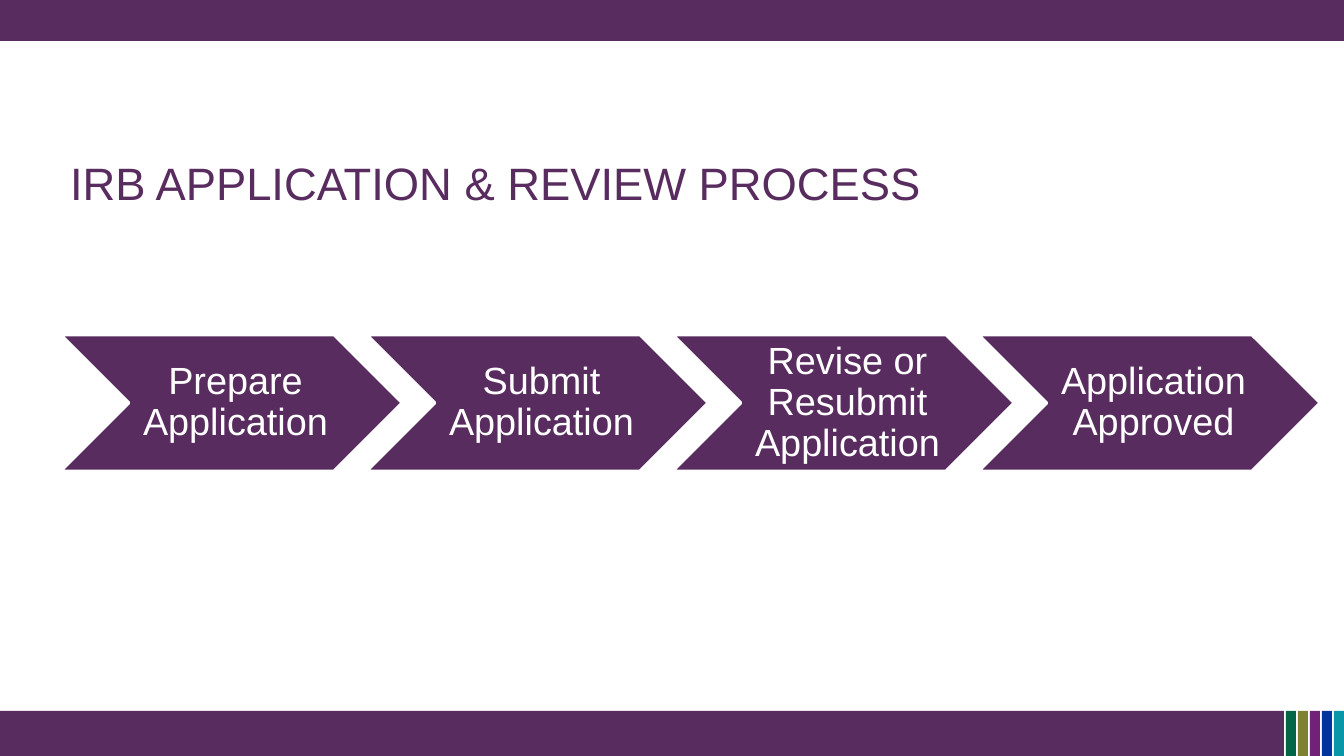
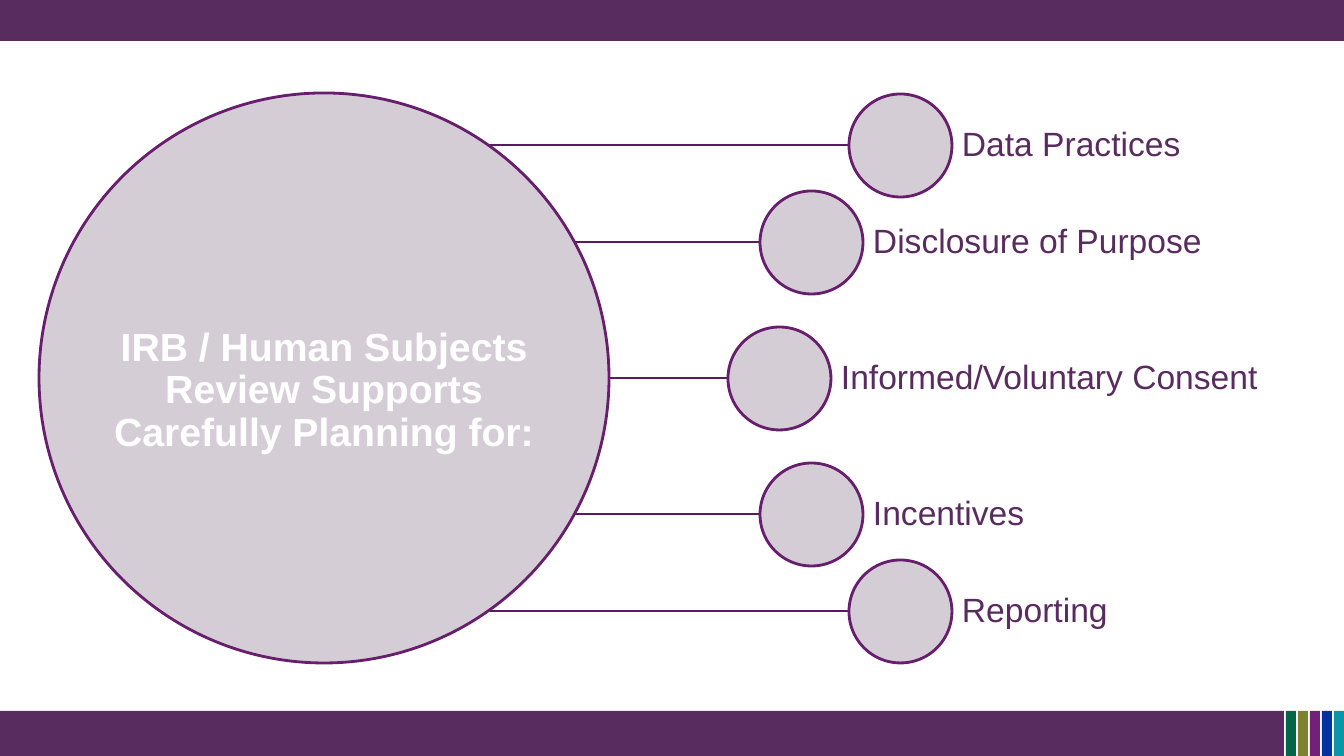
from lxml import etree
from pptx import Presentation
from pptx.dml.color import RGBColor
from pptx.enum import shapes, text
from pptx.oxml import ns
from pptx import util as u

COLORS = {
    "plum": "592C5F",
    "outline": "671E6C",
    "spoke": "5A1A5F",
    "mist": "D5CDD6",
    "white": "FFFFFF",
    "green": "006647",
    "olive": "7E8034",
    "violet": "712177",
    "blue": "0033A0",
    "teal": "0996A9",
}
STRIPES = ["green", "olive", "violet", "blue", "teal"]
WIDTH, HEIGHT = 1344, 756
EMU_PER_PX = u.Inches(1) / 100.8


def px(length):
    return u.Emu(round(length * EMU_PER_PX))


def color(name):
    return RGBColor.from_string(COLORS[name])


class Deck:
    font = "Arial"
    line_width = u.Pt(2)

    def __init__(self):
        self.presentation = Presentation()
        self.presentation.slide_width = px(WIDTH)
        self.presentation.slide_height = px(HEIGHT)
        self.slide = None

    def new_slide(self, title=None):
        layout = self.presentation.slide_layouts[5 if title else 6]
        self.slide = self.presentation.slides.add_slide(layout)
        self.shape("RECTANGLE", 0, 0, WIDTH, 41, "plum")
        self.shape("RECTANGLE", 0, 711, 1284, 45, "plum")
        for i, stripe in enumerate(STRIPES):
            self.shape("RECTANGLE", 1286 + 12 * i, 711, 10, 45, stripe)
        if title:
            self.title(title)

    def place(self, item, left, top, width, height):
        item.left, item.top = px(left), px(top)
        item.width, item.height = px(width), px(height)

    def set_text(self, item, words, size, ink, align="LEFT", bold=False,
                 insets=(10, 0, 10, 0), spacing=0.9):
        frame = item.text_frame
        frame.text = words
        frame.word_wrap = True
        frame.auto_size = text.MSO_AUTO_SIZE.NONE
        frame.vertical_anchor = text.MSO_ANCHOR.MIDDLE
        frame.margin_left, frame.margin_top, frame.margin_right, frame.margin_bottom = map(px, insets)
        paragraph = frame.paragraphs[0]
        paragraph.alignment = text.PP_ALIGN[align]
        paragraph.line_spacing = spacing
        font = paragraph.runs[0].font
        font.name, font.size, font.bold = self.font, u.Pt(size), bold
        font.color.rgb = color(ink)

    def title(self, words):
        heading = self.slide.shapes.title
        self.place(heading, 60, 149, 1089, 67)
        self.set_text(heading, words, 32.4, "plum", spacing=1.0)

    def shape(self, preset, left, top, width, height, fill, outline=None):
        item = self.slide.shapes.add_shape(
            shapes.MSO_SHAPE[preset], px(left), px(top), px(width), px(height))
        item.shadow.inherit = False
        item.fill.solid()
        item.fill.fore_color.rgb = color(fill)
        if outline:
            item.line.color.rgb = color(outline)
            item.line.width = self.line_width
        else:
            item.line.fill.background()
        return item

    def label(self, words, left, top, width, height, size, ink, **style):
        box = self.slide.shapes.add_textbox(px(left), px(top), px(width), px(height))
        self.set_text(box, words, size, ink, **style)

    def line(self, x1, y1, x2, y2, ink):
        connector = self.slide.shapes.add_connector(
            shapes.MSO_CONNECTOR.STRAIGHT, px(x1), px(y1), px(x2), px(y2))
        connector.line.color.rgb = color(ink)
        connector.line.width = self.line_width
        etree.SubElement(connector._element.spPr, ns.qn("a:effectLst"))


def process_slide(deck):
    deck.new_slide("IRB APPLICATION & REVIEW PROCESS")
    steps = ["Prepare Application", "Submit Application",
             "Revise or Resubmit Application", "Application Approved"]
    for i, step in enumerate(steps):
        chevron = deck.shape("CHEVRON", 61 + 306 * i, 335, 341, 136, "plum", "white")
        deck.set_text(chevron, step, 27, "white", align="CENTER", insets=(12, 4, 4, 4))


def topics_slide(deck):
    deck.new_slide()
    hub_x, hub_y, hub_size = 324, 378, 570
    size = 103
    radius = size // 2
    topics = [
        ("Data Practices", 900, -233),
        ("Disclosure of Purpose", 811, -136),
        ("Informed/Voluntary Consent", 779, 0),
        ("Incentives", 811, 136),
        ("Reporting", 900, 233),
    ]
    for _, x, offset in topics:
        deck.line(hub_x, hub_y + offset, x, hub_y + offset, "spoke")
    deck.shape("OVAL", hub_x - hub_size // 2, hub_y - hub_size // 2,
               hub_size, hub_size, "mist", "outline")
    deck.label("IRB / Human Subjects Review Supports Carefully Planning for:",
               hub_x - 215, hub_y - 120, 430, 266, 28, "white",
               align="CENTER", bold=True, insets=(0, 0, 0, 0))
    for topic, x, offset in topics:
        left, top = x - radius, hub_y + offset - radius
        deck.shape("OVAL", left, top, size, size, "mist", "outline")
        deck.label(topic, left + size, top, 1304 - left - size, size, 24, "plum")


def main():
    deck = Deck()
    process_slide(deck)
    topics_slide(deck)
    deck.presentation.save("out.pptx")


if __name__ == "__main__":
    main()
